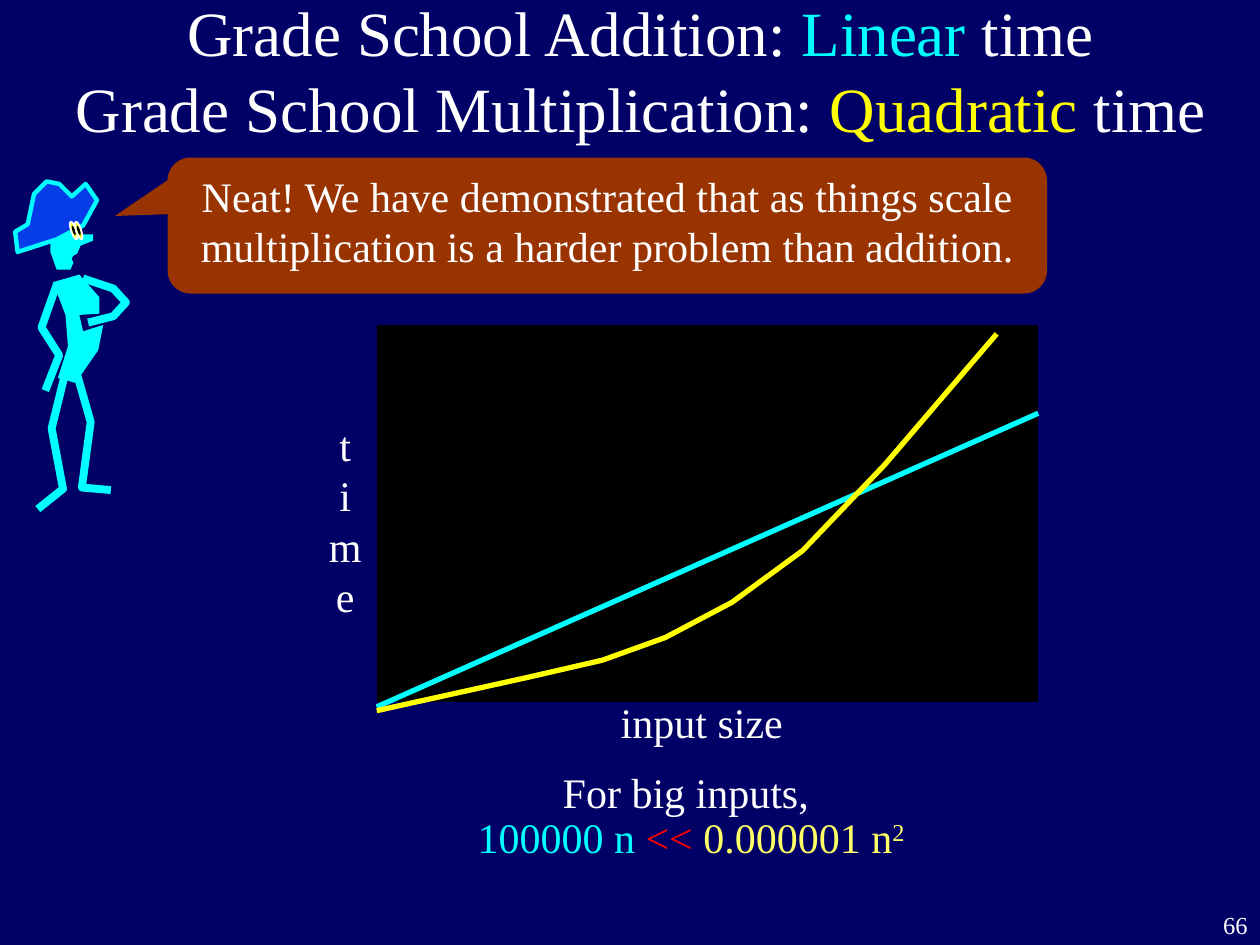
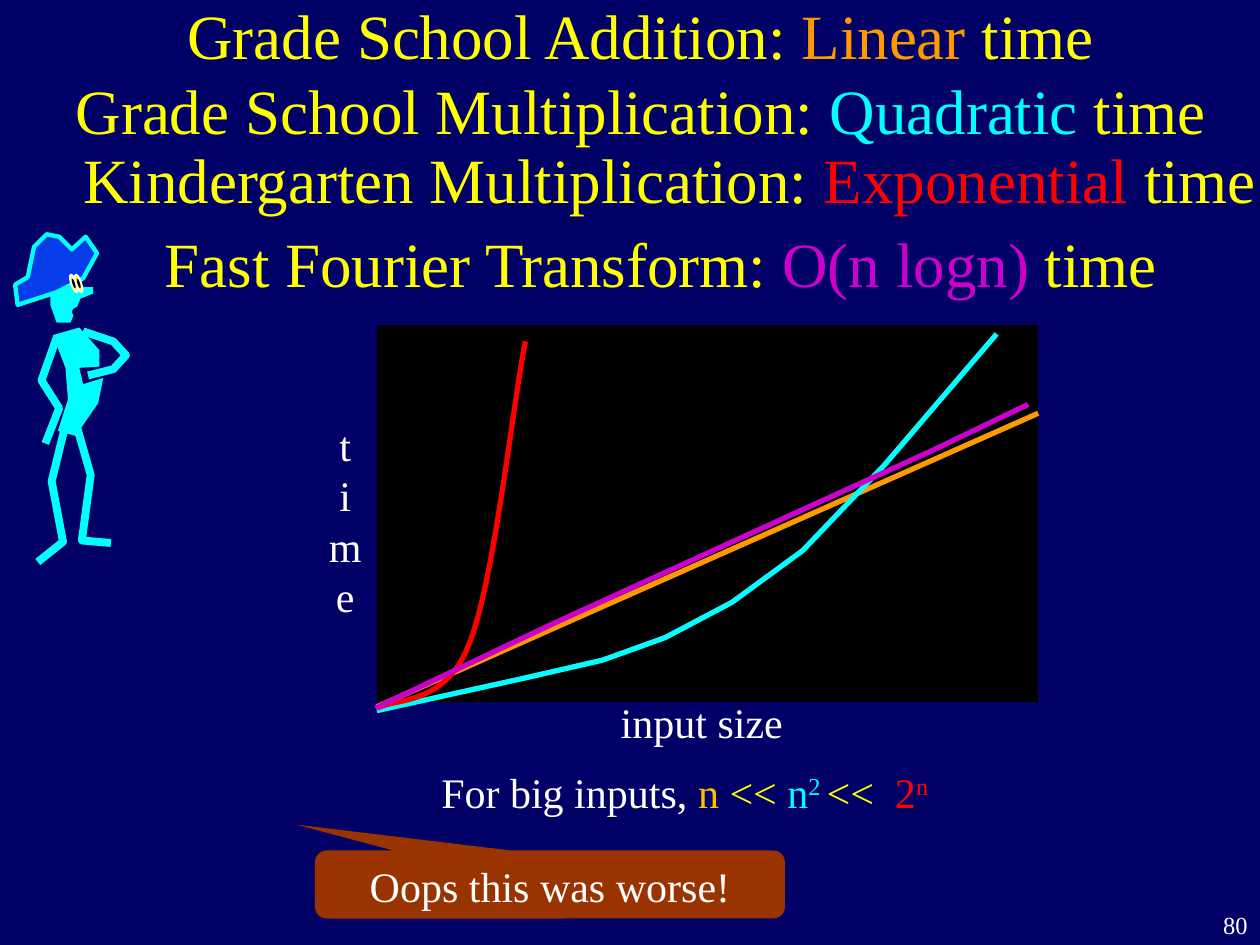
"""Builds two slides that compare the growth of running times."""
from lxml import etree
from pptx import Presentation
from pptx import util as u
from pptx.dml.color import RGBColor
from pptx.enum import shapes, text
from pptx.oxml.ns import qn

FONT = "Times New Roman"
NAVY, BLACK, WHITE, RUST = "000066", "000000", "FFFFFF", "993300"
CYAN, BLUE, YELLOW, PALE = "00FFFF", "063DE8", "FFFF00", "FFFF66"
RED, ORANGE, GOLD, PURPLE = "FF0000", "FF9900", "FFC000", "CC00CC"
TITLE_SIZE, BODY_SIZE, NUMBER_SIZE = 36, 24, 14
CURVE_WIDTH = 3

PLOT_AREA = (2.99, 2.58, 5.25, 2.99)
AXIS_LABELS = [("input size", (4.82, 5.48, 1.5, .51), False),
               ("t\nime", (2.49, 3.28, .5, 1.7), True)]
LINEAR = [(8.24, 3.28), (2.99, 5.61)]
QUADRATIC = [(2.99, 5.64), (4.17, 5.38), (4.78, 5.24), (5.28, 5.06),
             (5.81, 4.78), (6.37, 4.37), (7.02, 3.69), (7.91, 2.65)]
EXPONENTIAL = [(3, 5.62), (3.12, 5.54), (3.53, 5.61), (3.72, 5.12),
               (3.92, 4.64), (4.07, 3.21), (4.17, 2.71)]
N_LOG_N = [(2.98, 5.62), (4.39, 4.95), (7.39, 3.58), (8.16, 3.21)]

HEAD = [(.4, 1.8), (.64, 1.86), (.74, 1.86), (.74, 1.91), (.64, 1.95),
        (.56, 2.14), (.45, 2.14), (.4, 2)]
TORSO = [(.42, 2.24), (.63, 2.18), (.79, 2.36), (.79, 2.49), (.63, 2.5), (.66, 2.63),
         (.82, 2.58), (.78, 2.78), (.6, 3.04), (.46, 3), (.54, 2.75), (.52, 2.5)]
HAT = [(.12, 1.84), (.22, 1.78), (.27, 1.54), (.37, 1.44), (.47, 1.46), (.57, 1.56),
       (.68, 1.46), (.77, 1.59), (.66, 1.79), (.45, 1.9), (.14, 2)]
LIMBS = {
    "left arm": [(.45, 2.26), (.33, 2.6), (.47, 2.82), (.36, 3.1)],
    "right arm": [(.66, 2.21), (.9, 2.29), (1, 2.4), (.9, 2.51), (.7, 2.56)],
    "left leg": [(.52, 2.95), (.41, 3.4), (.5, 3.88), (.3, 4.04)],
    "right leg": [(.6, 2.93), (.72, 3.35), (.65, 3.87), (.88, 3.89)],
}
LIMB_WIDTH, HAT_EDGE = 4.5, 2.5
EYES_LEFT, EYE_TOP, EYE_TILT = (.51, .55), 1.81, 71.4
EYE_SIZE, PUPIL_SIZE = (.15, .04), (.08, .02)
MOUTH = (.57, 2.01, .16, .09)

SLIDES = [
    dict(
        number="66", pirate_drop=0, title_colour=WHITE,
        titles=[((.17, -.1, 9.83, 1.67), False, [
            ("Grade School Addition: ", "Linear", CYAN),
            ("Grade School Multiplication: ", "Quadratic", YELLOW)])],
        callout=((1.33, 1.25, 6.98, 1.08), (-.56, -.07, .17),
                 "Neat! We have demonstrated that as things scale "
                 "multiplication is a harder problem than addition."),
        verdict=((1.47, 6.08, 8.03, .98), [
            ("For big inputs, \n", WHITE), ("100000 n ", CYAN), ("<< ", RED),
            ("0.000001 n", PALE), ("2", PALE, True)]),
        linear=CYAN,
        curves=[(QUADRATIC, YELLOW, False)]),
    dict(
        number="80", pirate_drop=.42, title_colour=YELLOW,
        titles=[
            ((.17, -.08, 9.83, 1.67), False, [
                ("Grade School Addition: ", "Linear", ORANGE),
                ("Grade School Multiplication: ", "Quadratic", CYAN)]),
            ((.4, 1, 9.83, .83), True, [
                ("Kindergarten Multiplication: ", "Exponential", RED)]),
            ((.33, 1.67, 9.83, .83), True, [
                ("Fast Fourier Transform: ", "O(n logn)", PURPLE)])],
        callout=((2.5, 6.75, 3.73, .54), (-.54, -.88, .17), "Oops this was worse!"),
        verdict=((1.42, 6.08, 8.03, .98), [
            ("For big inputs, ", WHITE), ("n ", GOLD), ("<<", YELLOW), (" n", CYAN),
            ("2 ", CYAN, True), ("<< ", YELLOW), (" 2", RED), ("n", RED, True)]),
        linear=ORANGE,
        curves=[(QUADRATIC, CYAN, False), (EXPONENTIAL, RED, True),
                (N_LOG_N, PURPLE, False)]),
]


def inches(*values):
    return [u.Cm(value * 2.54) for value in values]


def colour(code):
    return RGBColor.from_string(code)


def paint(shape, fill=None, line=None, width=1):
    shape.shadow.inherit = False
    if fill:
        shape.fill.solid()
        shape.fill.fore_color.rgb = colour(fill)
    else:
        shape.fill.background()
    if line:
        shape.line.color.rgb = colour(line)
        shape.line.width = u.Pt(width)
    else:
        shape.line.fill.background()


def write(shape, runs, size=BODY_SIZE, align=text.PP_ALIGN.CENTER, wrap=True, middle=False):
    frame = shape.text_frame
    frame.word_wrap = wrap
    frame.vertical_anchor = text.MSO_ANCHOR.MIDDLE if middle else text.MSO_ANCHOR.TOP
    para = frame.paragraphs[0]
    para.alignment = align
    for words, code, *raised in runs:
        for index, piece in enumerate(words.split("\n")):
            if index:
                para.add_line_break()
            if not piece:
                continue
            span = para.add_run()
            span.text = piece
            span.font.name, span.font.size = FONT, u.Pt(size)
            span.font.color.rgb = colour(code)
            if raised:
                span.font._element.set("baseline", "30000")
    return para


def add_text(page, area, runs, **style):
    return write(page.shapes.add_textbox(*inches(*area)), runs, **style)


def add_preset(page, kind, area, fill, line=None):
    shape = page.shapes.add_shape(kind, *inches(*area))
    paint(shape, fill, line)
    return shape


def add_outline(page, points, closed=False, fill=None, line=None, width=CURVE_WIDTH, drop=0):
    start, *rest = [inches(x, y + drop) for x, y in points]
    builder = page.shapes.build_freeform(*start)
    builder.add_line_segments(rest, close=closed)
    shape = builder.convert_to_shape()
    paint(shape, fill, line, width)
    return shape


def bend(shape):
    segments = list(shape.element.iter(qn("a:lnTo")))
    for first in range(0, len(segments), 3):
        curve = etree.Element(qn("a:cubicBezTo"))
        segments[first].addprevious(curve)
        for segment in segments[first:first + 3]:
            curve.append(segment[0])
            segment.getparent().remove(segment)


def add_oval(page, left, top, width, height, fill, line=None):
    return add_preset(page, shapes.MSO_SHAPE.OVAL, (left, top, width, height), fill, line)


def add_eye(page, left, top):
    eye = add_oval(page, left, top, *EYE_SIZE, YELLOW, WHITE)
    inset_x, inset_y = [(outer - inner) / 2 for outer, inner in zip(EYE_SIZE, PUPIL_SIZE)]
    pupil = add_oval(page, left + inset_x, top + inset_y, *PUPIL_SIZE, BLACK)
    eye.rotation = pupil.rotation = EYE_TILT


def add_pirate(page, drop):
    for part in (HEAD, TORSO):
        add_outline(page, part, closed=True, fill=CYAN, drop=drop)
    for joints in LIMBS.values():
        add_outline(page, joints, line=CYAN, width=LIMB_WIDTH, drop=drop)
    add_outline(page, HAT, closed=True, fill=BLUE, line=CYAN, width=HAT_EDGE, drop=drop)
    for left in EYES_LEFT:
        add_eye(page, left, EYE_TOP + drop)
    left, top, width, height = MOUTH
    add_oval(page, left, top + drop, width, height, NAVY)


def add_plot(page, linear, curves):
    add_preset(page, shapes.MSO_SHAPE.RECTANGLE, PLOT_AREA, BLACK)
    for words, area, wrap in AXIS_LABELS:
        add_text(page, area, [(words, WHITE)], wrap=wrap)
    start, end = LINEAR
    line = page.shapes.add_connector(shapes.MSO_CONNECTOR.STRAIGHT, *inches(*start, *end))
    line.line.color.rgb = colour(linear)
    line.line.width = u.Pt(CURVE_WIDTH)
    etree.SubElement(line.element.spPr, qn("a:effectLst"))
    for points, code, curved in curves:
        outline = add_outline(page, points, line=code)
        if curved:
            bend(outline)


def add_callout(page, area, tail, words):
    bubble = add_preset(page, shapes.MSO_SHAPE.ROUNDED_RECTANGULAR_CALLOUT, area, RUST)
    for index, value in enumerate(tail):
        bubble.adjustments[index] = value
    write(bubble, [(words, WHITE)])


def title_runs(lines, base):
    runs = []
    for index, (method, growth, accent) in enumerate(lines):
        lead = "\n" if index else ""
        runs += [(lead + method, base), (growth, accent), (" time", base)]
    return runs


def build_page(deck, content):
    page = deck.slides.add_slide(deck.slide_layouts[6])
    page.background.fill.solid()
    page.background.fill.fore_color.rgb = colour(NAVY)
    add_text(page, (9.5, 7.17, .5, .33), [(content["number"], WHITE)],
             size=NUMBER_SIZE, align=text.PP_ALIGN.RIGHT)
    add_callout(page, *content["callout"])
    add_pirate(page, content["pirate_drop"])
    for area, middle, lines in content["titles"]:
        add_text(page, area, title_runs(lines, content["title_colour"]),
                 size=TITLE_SIZE, middle=middle)
    area, runs = content["verdict"]
    add_text(page, area, runs).line_spacing = .9
    add_plot(page, content["linear"], content["curves"])


def main():
    deck = Presentation()
    deck.slide_width, deck.slide_height = inches(10, 7.5)
    for content in SLIDES:
        build_page(deck, content)
    deck.save("out.pptx")


if __name__ == "__main__":
    main()
